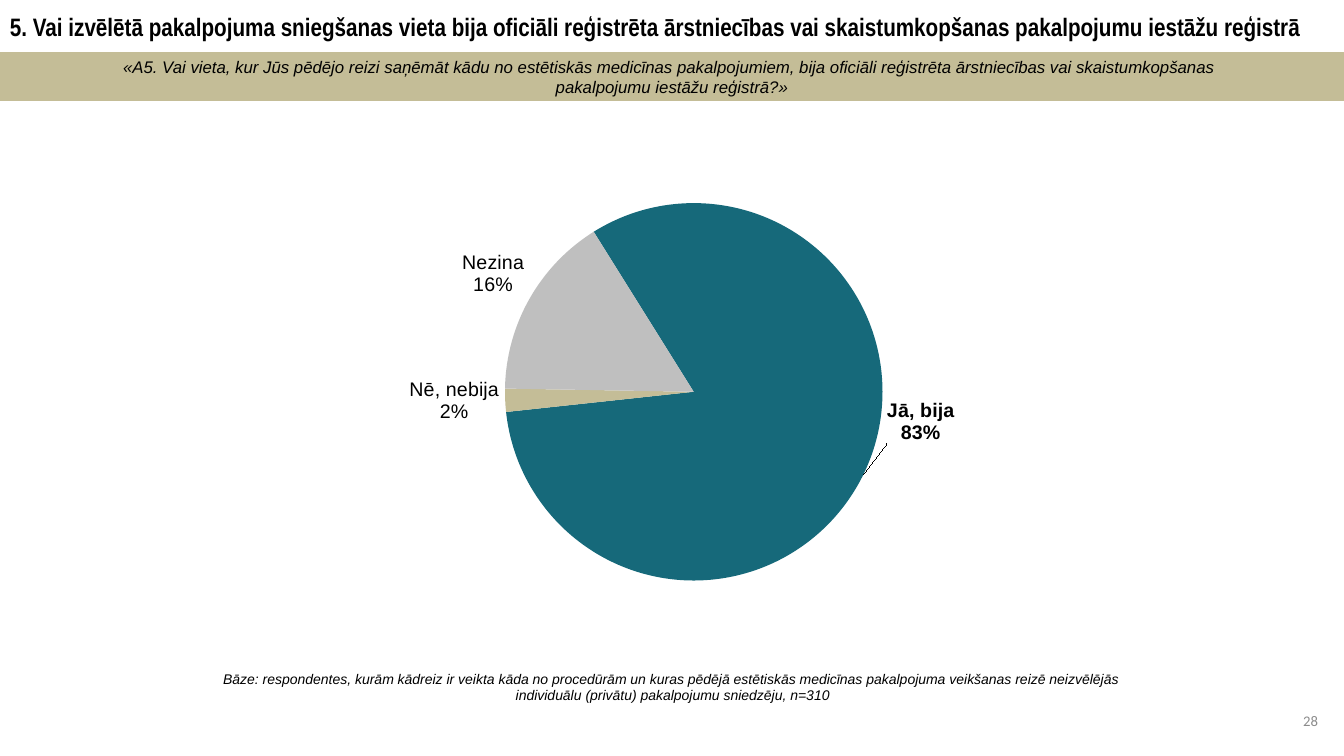
from lxml import etree
from pptx import Presentation
from pptx.chart.data import CategoryChartData
from pptx.dml.color import RGBColor
from pptx.enum.chart import XL_CHART_TYPE, XL_LABEL_POSITION
from pptx.enum.shapes import MSO_SHAPE
from pptx.enum.text import MSO_ANCHOR, PP_ALIGN
from pptx.oxml import parse_xml
from pptx.oxml.ns import nsdecls, qn
from pptx.util import Inches, Pt

SLIDE_WIDTH, SLIDE_HEIGHT = 13.33, 7.5
TEAL, SAND, GREY, BLACK, PAGE_GREY = "16697A", "C4BD97", "BFBFBF", "000000", "8C8C8C"
ANSWERS = [("Jā, bija", 83, TEAL), ("Nē, nebija", 2, SAND), ("Nezina", 16, GREY)]


def color(hex_string):
    return RGBColor.from_string(hex_string)


def write(shape, text, size, font_name="Arial", hex_string=BLACK,
          align=PP_ALIGN.CENTER, anchor=MSO_ANCHOR.MIDDLE, bold=False, italic=False):
    frame = shape.text_frame
    frame.text = text
    frame.word_wrap = True
    frame.vertical_anchor = anchor
    paragraph = frame.paragraphs[0]
    paragraph.alignment = align
    for run in paragraph.runs:
        font = run.font
        font.name, font.size, font.bold, font.italic = font_name, Pt(size), bold, italic
        font.color.rgb = color(hex_string)


def add_text(slide, box, text, size, **style):
    shape = slide.shapes.add_textbox(*(Inches(length) for length in box))
    write(shape, text, size, **style)


def add_question_band(slide, box, text):
    band = slide.shapes.add_shape(MSO_SHAPE.RECTANGLE, *(Inches(length) for length in box))
    band.shadow.inherit = False
    band.fill.solid()
    band.fill.fore_color.rgb = color(SAND)
    band.line.color.rgb = color(SAND)
    band.line.width = Pt(0.75)
    write(band, text, 12, italic=True)


def manual_layout(x, y, width=None, height=None):
    """Return a chart layout element; lengths are fractions of the chart."""
    parts = [("x", x), ("y", y)]
    if width:
        parts = [("layoutTarget", "inner"), ("xMode", "edge"), ("yMode", "edge"),
                 *parts, ("w", width), ("h", height)]
    body = "".join(f'<c:{tag} val="{value}"/>' for tag, value in parts)
    return parse_xml(f"<c:layout {nsdecls('c')}><c:manualLayout>{body}"
                     "</c:manualLayout></c:layout>")


def show_category_and_value(label_element):
    label_element.find(qn("c:showVal")).set("val", "1")
    label_element.find(qn("c:showCatName")).set("val", "1")
    label_element.find(qn("c:showPercent")).set("val", "0")
    separator = etree.Element(qn("c:separator"))
    separator.text = "\n"
    label_element.find(qn("c:showBubbleSize")).addnext(separator)


def add_answer_pie(slide, box):
    data = CategoryChartData(number_format='0"%"')
    data.categories = [name for name, _, _ in ANSWERS]
    data.add_series("Series 1", [value for _, value, _ in ANSWERS])
    chart = slide.shapes.add_chart(
        XL_CHART_TYPE.PIE, *(Inches(length) for length in box), data).chart
    chart.has_legend = False
    chart.has_title = False
    chart.font.name, chart.font.size = "Arial", Pt(14)
    chart.font.color.rgb = color(BLACK)

    # Plot placement and rotation
    plot = chart.plots[0]
    plot.vary_by_categories = False
    plot_area = chart._chartSpace.chart.plotArea
    for layout in plot_area.findall(qn("c:layout")):
        plot_area.remove(layout)
    plot_area.insert(0, manual_layout(0.315, 0.118, 0.417, 0.82))
    pie = plot_area.find(qn("c:pieChart"))
    for angle in pie.findall(qn("c:firstSliceAng")):
        pie.remove(angle)
    etree.SubElement(pie, qn("c:firstSliceAng")).set("val", "328")

    # Slice colours
    series = plot.series[0]
    for index, (_, _, hex_string) in enumerate(ANSWERS):
        fill = series.points[index].format.fill
        fill.solid()
        fill.fore_color.rgb = color(hex_string)

    # Labels, with the main answer in bold and moved to mid-height
    labels = series.data_labels
    labels.position = XL_LABEL_POSITION.OUTSIDE_END
    labels.font.name, labels.font.size = "Arial", Pt(14)
    labels.font.color.rgb = color(BLACK)
    show_category_and_value(labels._element)
    main_label = series.points[0].data_label
    main_label.font.name, main_label.font.size = "Arial", Pt(14)
    main_label.font.bold = True
    main_label.font.color.rgb = color(BLACK)
    main_label.position = XL_LABEL_POSITION.OUTSIDE_END
    main_element = labels._element.find(qn("c:dLbl"))
    show_category_and_value(main_element)
    main_element.find(qn("c:idx")).addnext(manual_layout(0.02, -0.15))


def build_slide(presentation):
    slide = presentation.slides.add_slide(presentation.slide_layouts[6])
    # Heading
    add_text(slide, (0, 0, SLIDE_WIDTH, 0.52),
             "5. Vai izvēlētā pakalpojuma sniegšanas vieta bija oficiāli reģistrēta "
             "ārstniecības vai skaistumkopšanas pakalpojumu iestāžu reģistrā",
             18, font_name="Arial Narrow", align=PP_ALIGN.LEFT, bold=True)
    add_question_band(slide, (0, 0.52, SLIDE_WIDTH, 0.48),
                      "«A5. Vai vieta, kur Jūs pēdējo reizi saņēmāt kādu no estētiskās "
                      "medicīnas pakalpojumiem, bija oficiāli reģistrēta ārstniecības vai "
                      "skaistumkopšanas \vpakalpojumu iestāžu reģistrā?»")
    # Chart
    add_answer_pie(slide, (2.18, 1.19, 8.98, 5.11))
    # Footer
    add_text(slide, (1.67, 6.58, 10, 0.47),
             "Bāze: respondentes, kurām kādreiz ir veikta kāda no procedūrām un kuras "
             "pēdējā estētiskās medicīnas pakalpojuma veikšanas reizē neizvēlējās "
             "\vindividuālu (privātu) pakalpojumu sniedzēju, n=310", 10, italic=True)
    add_text(slide, (11.75, 6.95, 1.42, 0.4), "28", 10.5, font_name="Calibri",
             hex_string=PAGE_GREY, align=PP_ALIGN.RIGHT)


def main():
    presentation = Presentation()
    presentation.slide_width = Inches(SLIDE_WIDTH)
    presentation.slide_height = Inches(SLIDE_HEIGHT)
    build_slide(presentation)
    presentation.save("out.pptx")


if __name__ == "__main__":
    main()
